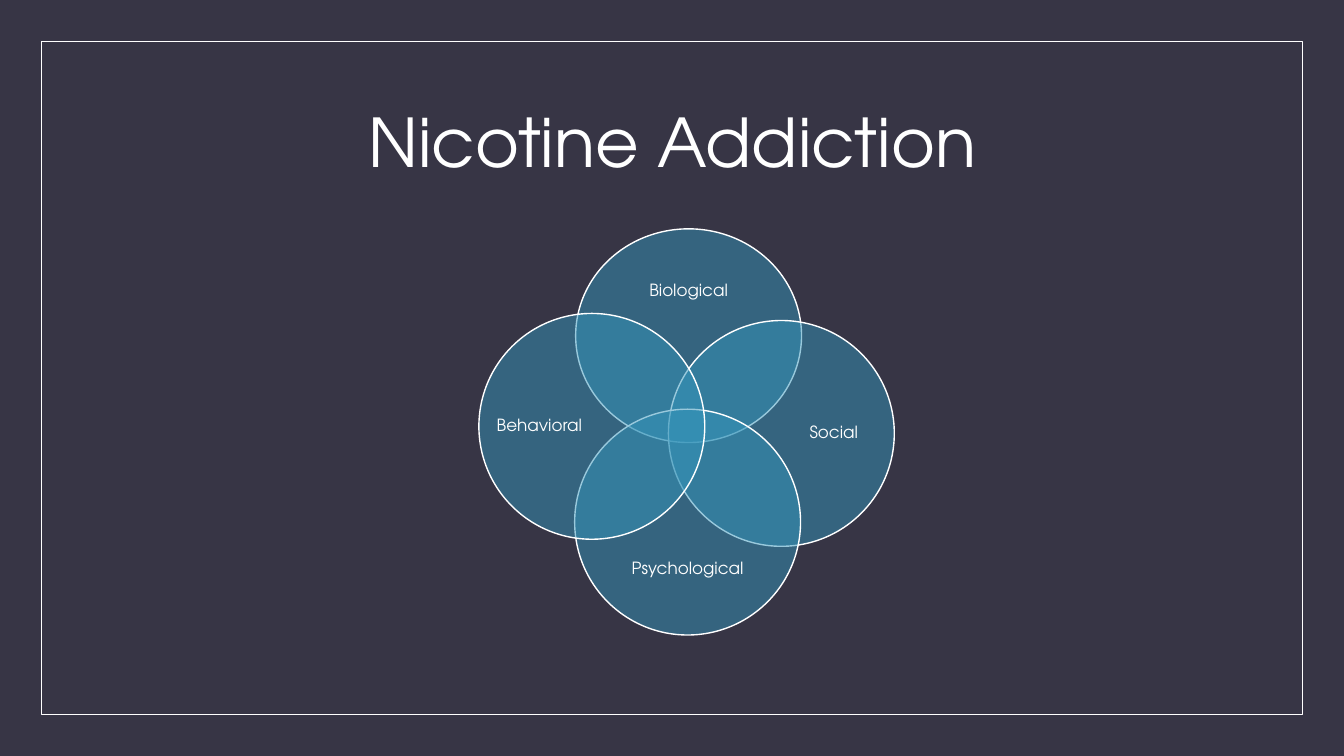
from lxml import etree
from pptx import Presentation
from pptx.dml.color import RGBColor
from pptx.enum.shapes import MSO_SHAPE
from pptx.enum.text import MSO_ANCHOR, PP_ALIGN
from pptx.oxml.ns import qn
from pptx.util import Inches, Pt

RECTANGLE, OVAL = MSO_SHAPE.RECTANGLE, MSO_SHAPE.OVAL
MIDDLE, CENTER = MSO_ANCHOR.MIDDLE, PP_ALIGN.CENTER
WIDTH, HEIGHT, MARGIN = 13.33, 7.5, 0.41
FONT = "TeX Gyre Adventor"
NIGHT, WHITE, TEAL = "373545", "FFFFFF", "3494BA"


def color(code):
    return RGBColor.from_string(code)


def write(holder, text, size=12, inset=0):
    frame = holder.text_frame
    frame.word_wrap = True
    frame.vertical_anchor = MIDDLE
    frame.margin_left = frame.margin_right = Inches(inset)
    frame.margin_top = frame.margin_bottom = Inches(inset / 2)
    paragraph = frame.paragraphs[0]
    paragraph.alignment = CENTER
    paragraph.line_spacing = 0.9
    run = paragraph.add_run()
    run.text = text
    run.font.size = Pt(size)
    run.font.name = FONT
    run.font.color.rgb = color(WHITE)


deck = Presentation()
deck.slide_width, deck.slide_height = Inches(WIDTH), Inches(HEIGHT)
slide = deck.slides.add_slide(deck.slide_layouts[5])
slide.background.fill.solid()
slide.background.fill.fore_color.rgb = color(NIGHT)

# Thin border, set in by the same margin on every side
border = slide.shapes.add_shape(
    RECTANGLE, Inches(MARGIN), Inches(MARGIN),
    Inches(WIDTH - 2 * MARGIN), Inches(HEIGHT - 2 * MARGIN))
border.shadow.inherit = False
border.fill.background()
border.line.color.rgb = color(WHITE)
border.line.width = Pt(0.5)

# Title
title = slide.shapes.title
title.left, title.top = Inches(1.17), Inches(0.7)
title.width, title.height = Inches(11), Inches(1.5)
write(title, "Nicotine Addiction", size=48, inset=0.1)

# Four overlapping factors: circle box, then label box
factors = [
    ("Biological", (5.71, 2.27, 2.24, 2.12), (5.97, 2.55, 1.72, 0.67)),
    ("Social", (6.63, 3.18, 2.24, 2.24), (7.84, 3.44, 0.86, 1.72)),
    ("Psychological", (5.7, 4.06, 2.24, 2.24), (5.96, 5.29, 1.72, 0.71)),
    ("Behavioral", (4.75, 3.11, 2.24, 2.24), (4.92, 3.37, 0.86, 1.72)),
]
for factor, circle_box, label_box in factors:
    circle = slide.shapes.add_shape(OVAL, *map(Inches, circle_box))
    circle.shadow.inherit = False
    circle.fill.solid()
    circle.fill.fore_color.rgb = color(TEAL)
    # Half transparent, so the overlaps show
    tint = circle.fill._xPr.find(qn("a:solidFill"))[0]
    etree.SubElement(tint, qn("a:alpha"), val="50000")
    circle.line.color.rgb = color(WHITE)
    circle.line.width = Pt(1)

    label = slide.shapes.add_textbox(*map(Inches, label_box))
    write(label, factor)

deck.save("out.pptx")
